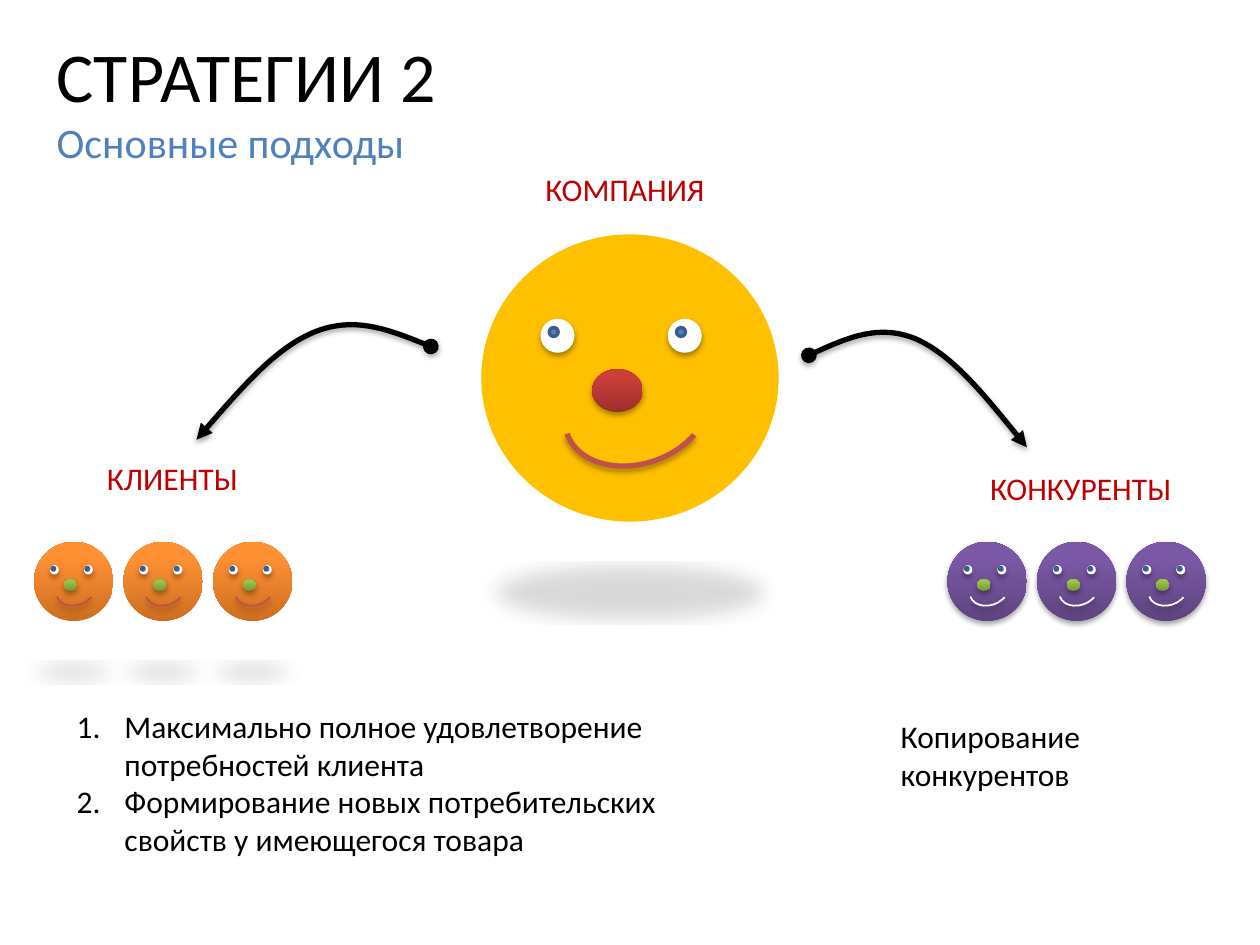
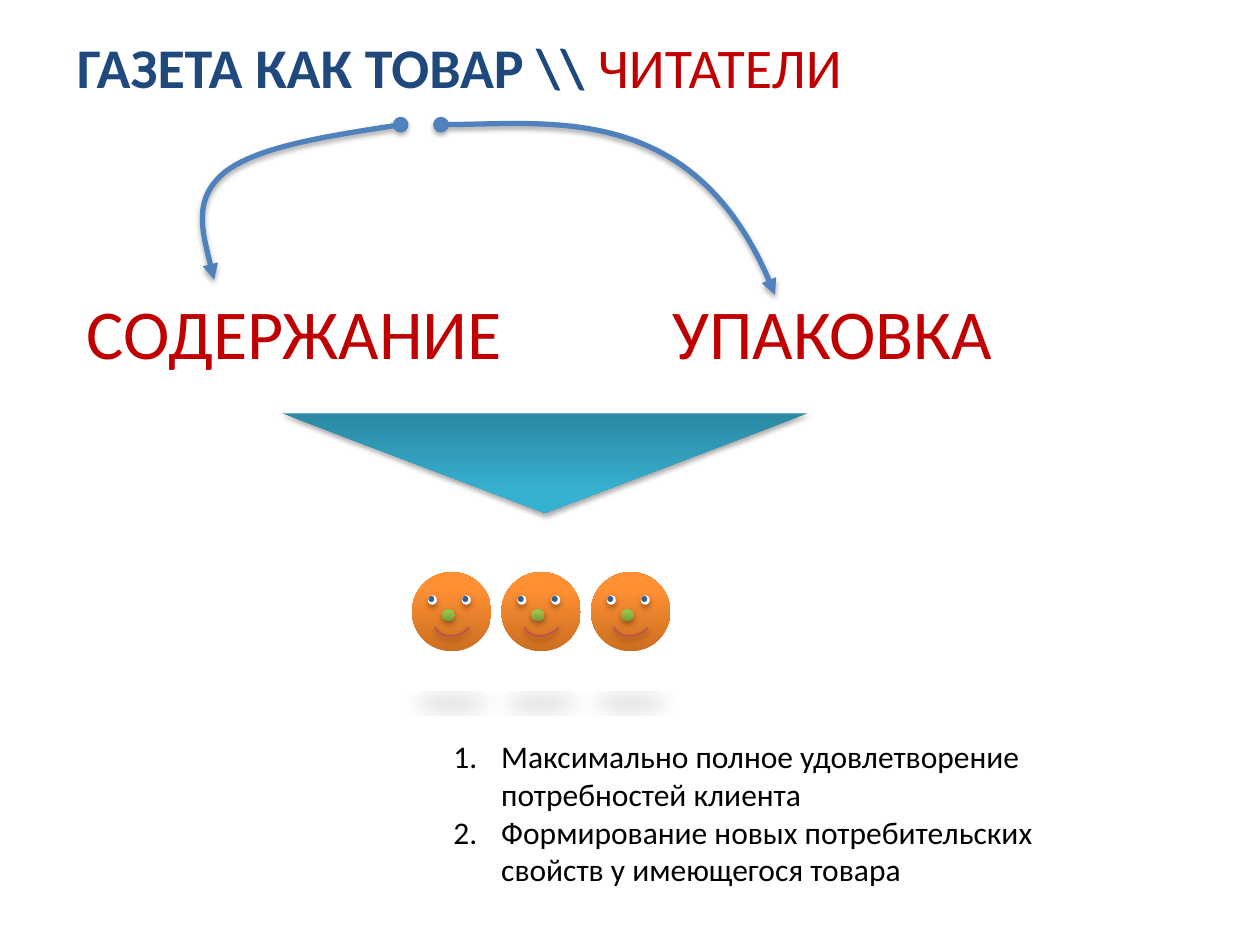
"""Builds two slides on strategies, with smiling faces and curved arrows."""
from lxml import etree
from pptx import Presentation
from pptx.dml.color import RGBColor
from pptx.enum.shapes import MSO_SHAPE
from pptx.enum.text import MSO_ANCHOR, MSO_AUTO_SIZE, PP_ALIGN
from pptx.oxml.ns import qn
from pptx.util import Inches, Pt

OVAL, ARC, WEDGE = MSO_SHAPE.OVAL, MSO_SHAPE.ARC, MSO_SHAPE.ISOSCELES_TRIANGLE
TOP, LEFT, GROW = MSO_ANCHOR.TOP, PP_ALIGN.LEFT, MSO_AUTO_SIZE.SHAPE_TO_FIT_TEXT
FONT = "Calibri"
COLORS = {
    "black": "000000", "white": "FFFFFF", "red": "C00000", "blue": "4F81BD",
    "navy": "1F497D", "rim": "3A5F8C", "gold": "FFC000", "lip": "C0504D",
}
BLENDS = {
    "rose": ("9C2F2D", "CB3E3A"), "orange": ("CC6E20", "FF9034"),
    "green": ("779737", "9BC348"), "violet": ("5F4480", "7B58A6"),
    "teal": ("2A88A2", "37B1D2"),
}
SOFT = {"blurRad": 40000, "dist": 23000, "dir": 5400000, "rotWithShape": 0}
FLOOR = {"blurRad": 152400, "dist": 317500, "dir": 5400000,
         "sx": 90000, "sy": -19000, "rotWithShape": 0}
ALPHA = {"soft": (SOFT, 35000), "floor": (FLOOR, 15000)}


def paint(shape, fill=None, line=None, width=1, shade=None):
    """Set the fill, line and shadow of a shape."""
    if fill in BLENDS:
        shape.fill.gradient()
        shape.fill.gradient_angle = 90
        for stop, tone, spot in zip(shape.fill.gradient_stops, BLENDS[fill], (0, 0.8)):
            stop.color.rgb = RGBColor.from_string(tone)
            stop.position = spot
    elif fill:
        shape.fill.solid()
        shape.fill.fore_color.rgb = RGBColor.from_string(COLORS[fill])
    else:
        shape.fill.background()
    if line:
        shape.line.color.rgb = RGBColor.from_string(COLORS[line])
        shape.line.width = Pt(width)
    else:
        shape.line.fill.background()
    shape.shadow.inherit = False
    if shade:
        attrs, alpha = ALPHA[shade]
        glow = shape._element.spPr.find(qn("a:effectLst"))
        drop = etree.SubElement(glow, qn("a:outerShdw"), {k: str(v) for k, v in attrs.items()})
        tint = etree.SubElement(drop, qn("a:srgbClr"), val=COLORS["black"])
        etree.SubElement(tint, qn("a:alpha"), val=str(alpha))


def write(box, place, lines, wrap=False, count=False):
    """Place a box and fill it with lines of (text, size, color, bold) runs."""
    box.left, box.top, box.width, box.height = map(Inches, place)
    frame = box.text_frame
    frame.word_wrap, frame.vertical_anchor, frame.auto_size = wrap, TOP, GROW
    for i, runs in enumerate(lines):
        para = frame.add_paragraph() if i else frame.paragraphs[0]
        para.alignment = LEFT
        if count:
            props = para._p.get_or_add_pPr()
            props.set("marL", str(Inches(0.38)))
            props.set("indent", str(Inches(-0.38)))
            etree.SubElement(props, qn("a:buFont"), typeface="+mj-lt")
            etree.SubElement(props, qn("a:buAutoNum"), type="arabicPeriod")
        for text, size, color, bold in runs:
            run = para.add_run()
            run.text = text
            run.font.name, run.font.size, run.font.bold = FONT, Pt(size), bold
            run.font.color.rgb = RGBColor.from_string(COLORS[color])


deck = Presentation()
deck.slide_width, deck.slide_height = Inches(10), Inches(7.5)
plan, paper = [deck.slides.add_slide(deck.slide_layouts[5]) for _ in range(2)]

write(plan.shapes.title, (0.35, 0.21, 3.37, 1.18), [
    [("СТРАТЕГИИ 2", 40, "black", False)],
    [("Основные подходы", 24, "blue", False)],
])
write(paper.shapes.title, (0.51, 0.21, 6.37, 0.64), [
    [("ГАЗЕТА КАК ТОВАР \\\\ ", 32, "navy", True), ("ЧИТАТЕЛИ", 32, "red", False)],
])

labels = [
    (plan, (4.23, 1.3, 1.48, 0.4), ["КОМПАНИЯ"], 18, "red"),
    (plan, (0.75, 3.59, 1.25, 0.4), ["КЛИЕНТЫ"], 18, "red"),
    (plan, (7.76, 3.67, 1.65, 0.4), ["КОНКУРЕНТЫ"], 18, "red"),
    (plan, (7.05, 5.64, 1.7, 0.71), ["Копирование", "конкурентов"], 18, "black"),
    (paper, (0.59, 2.25, 3.53, 0.77), ["СОДЕРЖАНИЕ"], 40, "red"),
    (paper, (5.24, 2.25, 2.77, 0.77), ["УПАКОВКА"], 40, "red"),
]
for slide, place, texts, size, color in labels:
    box = slide.shapes.add_textbox(0, 0, 0, 0)
    write(box, place, [[(text, size, color, False)] for text in texts])

goals = [
    "Максимально полное удовлетворение потребностей клиента",
    "Формирование новых потребительских свойств у имеющегося товара",
]
for slide, x, y in [(plan, 0.51, 5.56), (paper, 3.5, 5.8)]:
    box = slide.shapes.add_textbox(0, 0, 0, 0)
    write(box, (x, y, 5, 1.31), [[(goal, 18, "black", False)] for goal in goals], True, True)

WIDE, HIGH, SMALL, STEP = 2.36, 2.28, 0.63, 0.71
faces = [(plan, 3.82, 1.86, WIDE, HIGH, "gold", "rose", "lip", 3, "floor")]
rows = [
    (plan, 0.27, 4.3, "orange", "lip", "floor"),
    (plan, 7.52, 4.3, "violet", "white", "soft"),
    (paper, 3.27, 4.54, "orange", "lip", "floor"),
]
for slide, x, y, skin, lip, shade in rows:
    for i in range(3):
        faces.append((slide, x + i * STEP, y, SMALL, SMALL, skin, "green", lip, 1, shade))

for slide, x, y, w, h, skin, nose, lip, thick, shade in faces:
    group = slide.shapes.add_group_shape()
    parts = [
        (OVAL, 0, 0, WIDE, HIGH, skin, None, 0, shade),
        (OVAL, 0.47, 0.67, 0.27, 0.27, "white", None, 0, "soft"),
        (OVAL, 1.48, 0.67, 0.27, 0.27, "white", None, 0, "soft"),
        (ARC, 0.65, 0.97, 1.17, 0.85, None, lip, thick, "soft"),
        (OVAL, 0.88, 1.07, 0.4, 0.34, nose, None, 0, "soft"),
        (OVAL, 0.54, 0.74, 0.07, 0.07, "blue", "rim", 2, None),
        (OVAL, 1.55, 0.74, 0.07, 0.07, "blue", "rim", 2, None),
    ]
    for kind, dx, dy, dw, dh, fill, line, width, glow in parts:
        part = group.shapes.add_shape(
            kind, Inches(x + dx * w / WIDE), Inches(y + dy * h / HIGH),
            Inches(dw * w / WIDE), Inches(dh * h / HIGH))
        if kind == ARC:
            part.rotation = 161.4
            part.adjustments[0], part.adjustments[1] = 133.22, 0
        paint(part, fill, line, width, glow)

curves = [
    (plan, "black", [(3.42, 2.75), (3.12, 2.63), (2.82, 2.51), (2.51, 2.63),
                     (2.2, 2.75), (1.88, 3.12), (1.56, 3.49)]),
    (plan, "black", [(6.42, 2.82), (6.7, 2.69), (6.98, 2.57), (7.27, 2.69),
                     (7.56, 2.82), (7.85, 3.18), (8.15, 3.55)]),
    (paper, "blue", [(3.18, 0.99), (2.6, 1.08), (2.03, 1.17), (1.78, 1.37),
                     (1.53, 1.58), (1.62, 1.9), (1.7, 2.22)]),
    (paper, "blue", [(3.5, 0.99), (4.35, 0.99), (5.56, 0.81), (6.15, 2.34)]),
]
for slide, color, knots in curves:
    start, *rest = [(Inches(x), Inches(y)) for x, y in knots]
    pen = slide.shapes.build_freeform(*start)
    pen.add_line_segments(rest, close=False)
    curve = pen.convert_to_shape()
    paint(curve, None, color, 3, "soft")
    legs = list(curve._element.iter(qn("a:lnTo")))
    for i in range(0, len(legs), 3):
        bend = etree.Element(qn("a:cubicBezTo"))
        legs[i].addprevious(bend)
        for leg in legs[i:i + 3]:
            bend.append(leg[0])
            leg.getparent().remove(leg)
    edge = curve._element.spPr.find(qn("a:ln"))
    etree.SubElement(edge, qn("a:headEnd"), type="oval")
    etree.SubElement(edge, qn("a:tailEnd"), type="triangle")

wedge = paper.shapes.add_shape(WEDGE, Inches(2.24), Inches(3.28), Inches(4.17), Inches(0.79))
wedge.rotation = 180
paint(wedge, "teal", shade="soft")

deck.save("out.pptx")
